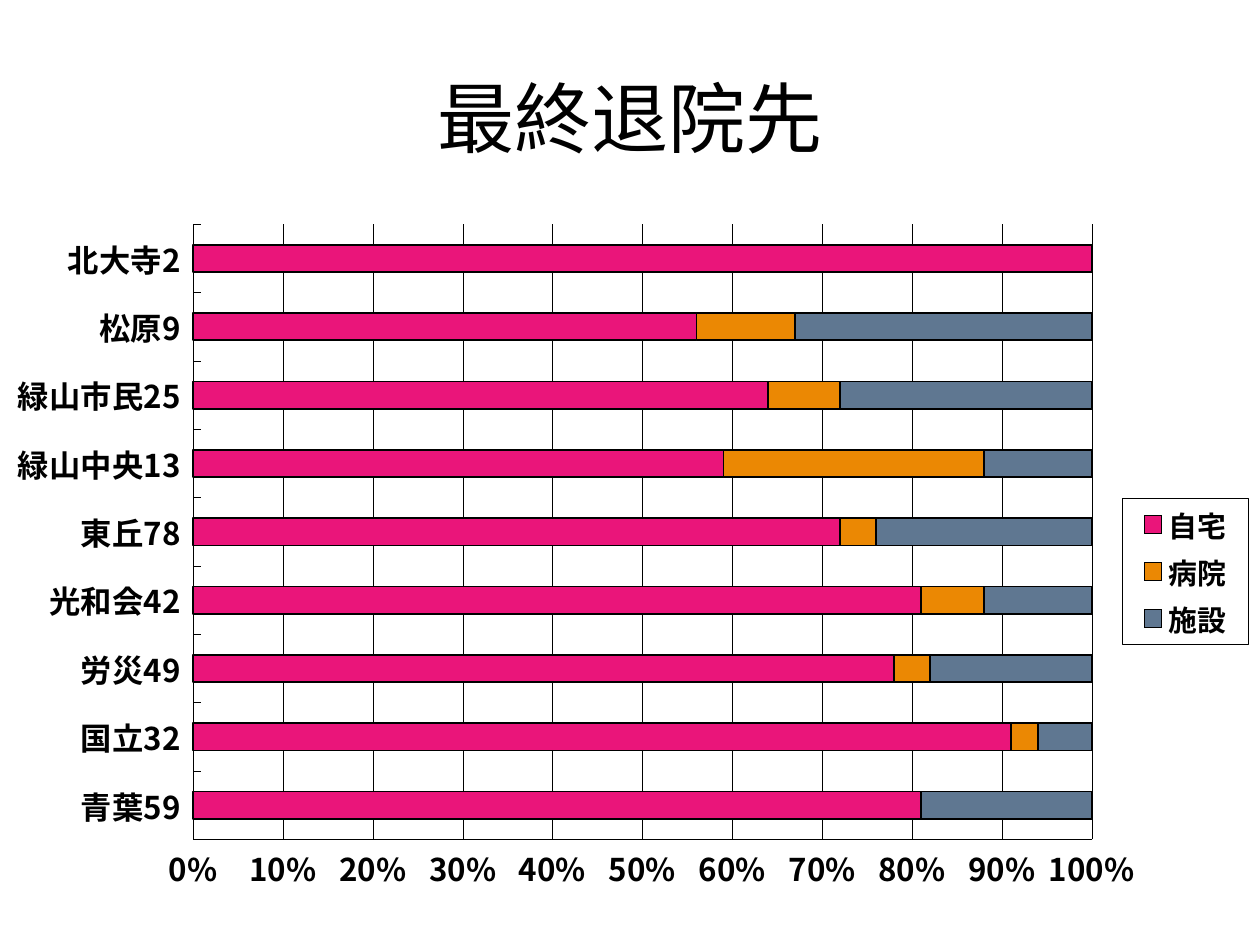
from dataclasses import dataclass

from lxml import etree
from pptx import Presentation
from pptx import oxml
from pptx.chart import data as cd
from pptx.dml.color import RGBColor
from pptx.enum import chart as ch, text
from pptx.oxml import ns
from pptx.util import Cm, Pt

BLACK = RGBColor(0x00, 0x00, 0x00)
PINK = RGBColor(0xEA, 0x15, 0x7A)
ORANGE = RGBColor(0xEB, 0x88, 0x03)
SLATE = RGBColor(0x5F, 0x77, 0x91)
TITLE_FONT = "Calibri"
CHART_FONT = "Noto Sans CJK JP"


@dataclass
class Destination:
    name: str
    values: tuple
    color: RGBColor


HOSPITALS = ["青葉59", "国立32", "労災49", "光和会42", "東丘78",
             "緑山中央13", "緑山市民25", "松原9", "北大寺2"]
DESTINATIONS = [
    Destination("自宅", (81, 91, 78, 81, 72, 59, 64, 56, 100), PINK),
    Destination("病院", (0, 3, 4, 7, 4, 29, 8, 11, 0), ORANGE),
    Destination("施設", (19, 6, 18, 12, 24, 12, 28, 33, 0), SLATE),
]


def style_font(font, name: str, size: float, bold: bool = False) -> None:
    font.name, font.size, font.bold = name, Pt(size), bold
    font.color.rgb = BLACK


def style_line(line, width: float) -> None:
    line.color.rgb = BLACK
    line.width = Pt(width)


def add_title(s, content: str, *, size: float) -> None:
    sp = s.shapes.title
    sp.left, sp.top, sp.width, sp.height = Cm(1.27), Cm(0.76), Cm(22.86), Cm(3.18)
    tf = sp.text_frame
    tf.vertical_anchor = text.MSO_ANCHOR.MIDDLE
    p = tf.paragraphs[0]
    p.alignment = text.PP_ALIGN.CENTER
    r = p.add_run()
    r.text = content
    style_font(r.font, TITLE_FONT, size)


def set_layout(parent, index: int, x: float, y: float, w: float, h: float,
               inner: bool = False) -> None:
    for old in parent.findall(ns.qn("c:layout")):
        parent.remove(old)
    layout = etree.Element(ns.qn("c:layout"))
    manual = etree.SubElement(layout, ns.qn("c:manualLayout"))
    target = [("layoutTarget", "inner")] if inner else []
    for tag, value in target + [("xMode", "edge"), ("yMode", "edge"),
                                ("x", x), ("y", y), ("w", w), ("h", h)]:
        etree.SubElement(manual, ns.qn(f"c:{tag}"), val=str(value))
    parent.insert(index, layout)


def style_legend(chart) -> None:
    chart.has_legend = True
    legend = chart.legend
    legend.position = ch.XL_LEGEND_POSITION.RIGHT
    legend.include_in_layout = False
    style_font(legend.font, CHART_FONT, 16.5, True)
    el = legend._element
    set_layout(el, 1, 0.895, 0.4, 0.1, 0.21)
    el.find(ns.qn("c:overlay")).addnext(oxml.parse_xml(
        f'<c:spPr {ns.nsdecls("c", "a")}><a:noFill/><a:ln w="3175"><a:solidFill>'
        f'<a:srgbClr val="{BLACK}"/></a:solidFill></a:ln></c:spPr>'))


def style_axes(chart) -> None:
    for axis in (chart.category_axis, chart.value_axis):
        style_font(axis.tick_labels.font, CHART_FONT, 17.9, True)
        style_line(axis.format.line, 0.25)
        axis.major_tick_mark = ch.XL_TICK_MARK.INSIDE
        axis.minor_tick_mark = ch.XL_TICK_MARK.NONE
    chart.category_axis.tick_label_position = ch.XL_TICK_LABEL_POSITION.LOW
    value = chart.value_axis
    value.minimum_scale, value.maximum_scale, value.major_unit = 0, 1, 0.1
    value.has_major_gridlines = True
    style_line(value.major_gridlines.format.line, 0.25)
    value.tick_labels.number_format = "0%"
    value.tick_labels.number_format_is_linked = False


def add_destination_chart(s, hospitals: list, destinations: list) -> None:
    data = cd.CategoryChartData()
    data.categories = hospitals
    for d in destinations:
        data.add_series(d.name, d.values)
    chart = s.shapes.add_chart(ch.XL_CHART_TYPE.BAR_STACKED_100, Cm(-0.18), Cm(4.45),
                               Cm(25.48), Cm(14), data).chart
    chart.has_title = False
    style_font(chart.font, CHART_FONT, 17.9, True)
    plot = chart.plots[0]
    plot.gap_width, plot.overlap, plot.vary_by_categories = 150, 100, False
    for series, d in zip(plot.series, destinations):
        series.format.fill.solid()
        series.format.fill.fore_color.rgb = d.color
        style_line(series.format.line, 1)
    style_axes(chart)
    style_legend(chart)
    root = chart._chartSpace
    set_layout(next(root.iter(ns.qn("c:plotArea"))), 0, 0.16, 0.005, 0.711, 0.886, True)
    for latin in list(root.iter(ns.qn("a:latin"))):
        latin.addnext(etree.Element(ns.qn("a:ea"), typeface=CHART_FONT))


def main() -> None:
    prs = Presentation()
    prs.slide_width, prs.slide_height = Cm(25.4), Cm(19.05)
    s = prs.slides.add_slide(prs.slide_layouts[5])
    add_title(s, "最終退院先", size=44)
    add_destination_chart(s, HOSPITALS, DESTINATIONS)
    prs.save("out.pptx")


if __name__ == "__main__":
    main()
